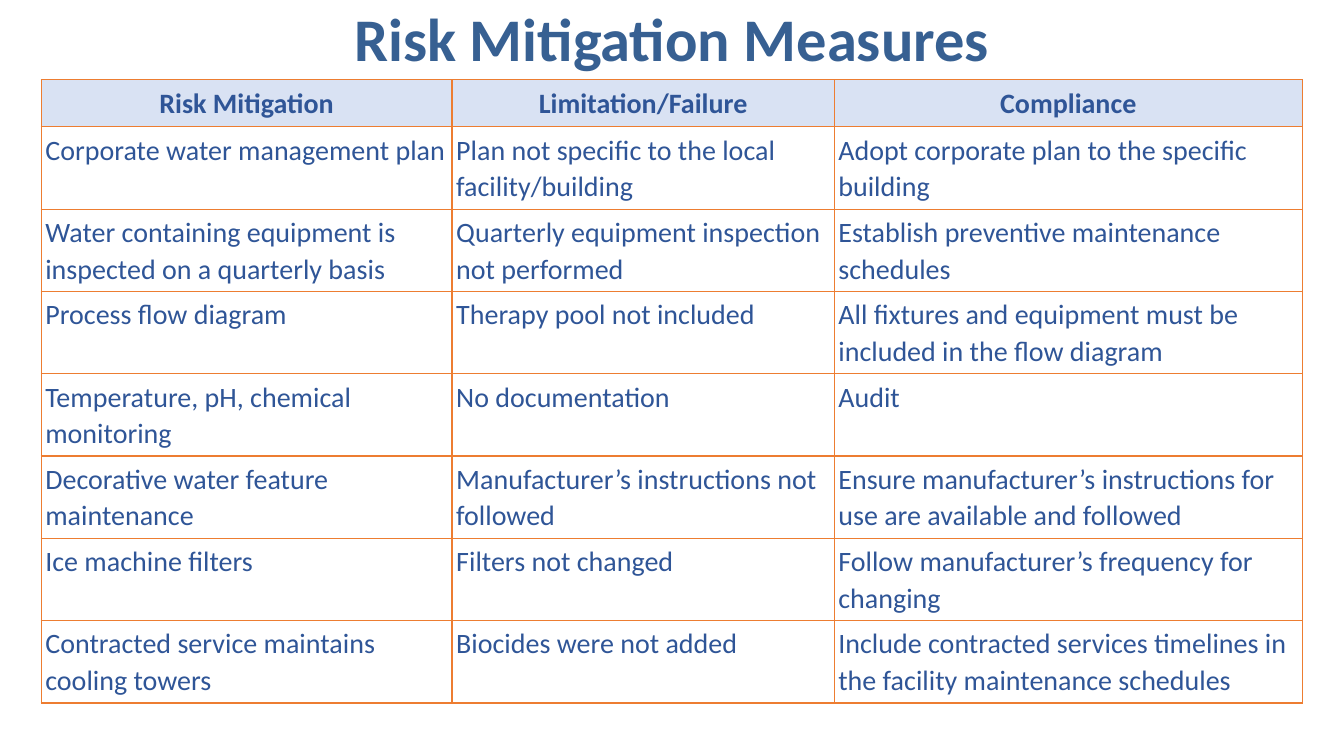
from dataclasses import dataclass

from lxml import etree
from pptx import Presentation
from pptx.dml.color import RGBColor
from pptx.enum.text import MSO_ANCHOR, MSO_AUTO_SIZE, PP_ALIGN
from pptx.oxml.ns import qn
from pptx.util import Pt

CENTER, LEFT = PP_ALIGN.CENTER, PP_ALIGN.LEFT
BOTTOM = MSO_ANCHOR.BOTTOM
NO_AUTOFIT = MSO_AUTO_SIZE.NONE

TITLE = "Risk Mitigation Measures"
HEADINGS = ("Risk Mitigation", "Limitation/Failure", "Compliance")
MEASURES = [
    ("Corporate water management plan",
     "Plan not specific to the local facility/building",
     "Adopt corporate plan to the specific building"),
    ("Water containing equipment is inspected on a quarterly basis",
     "Quarterly equipment inspection not performed",
     "Establish preventive maintenance schedules"),
    ("Process flow diagram",
     "Therapy pool not included",
     "All fixtures and equipment must be included in the flow diagram"),
    ("Temperature, pH, chemical monitoring",
     "No documentation",
     "Audit"),
    ("Decorative water feature maintenance",
     "Manufacturer’s instructions not followed",
     "Ensure manufacturer’s instructions for use are available and followed"),
    ("Ice machine filters",
     "Filters not changed",
     "Follow manufacturer’s frequency for changing"),
    ("Contracted service maintains cooling towers",
     "Biocides were not added",
     "Include contracted services timelines in the facility maintenance schedules"),
]


@dataclass(frozen=True)
class Theme:
    font: str = "Calibri"
    title_size: float = 43.2
    table_size: float = 20
    title_color: str = "376092"
    text_color: str = "2F5597"
    heading_fill: str = "D9E2F3"
    border_color: str = "ED7D31"
    border_width: float = 1


THEME = Theme()
SLIDE_SIZE = (960, 540)
TITLE_BOX = (66, 0, 828, 57)
TABLE_LEFT, TABLE_TOP = 29.4, 57
COLUMN_WIDTHS = (293.5, 273, 334.5)
HEADING_HEIGHT, MEASURE_HEIGHT = 33.6, 58.8
CELL_MARGIN = 3


def style_font(font, size, color, bold):
    font.name = THEME.font
    font.size = Pt(size)
    font.bold = bold
    font.color.rgb = RGBColor.from_string(color)


def add_borders(cell):
    """Outline all four sides; borders must come before the fill in the cell properties."""
    properties = cell._tc.get_or_add_tcPr()
    for index, side in enumerate(("a:lnL", "a:lnR", "a:lnT", "a:lnB")):
        line = etree.Element(qn(side), w=str(Pt(THEME.border_width)))
        fill = etree.SubElement(line, qn("a:solidFill"))
        etree.SubElement(fill, qn("a:srgbClr"), val=THEME.border_color)
        properties.insert(index, line)


def fill_cell(cell, wording, heading):
    cell.margin_left = cell.margin_right = Pt(CELL_MARGIN)
    cell.margin_top = cell.margin_bottom = Pt(CELL_MARGIN)
    if heading:
        cell.fill.solid()
        cell.fill.fore_color.rgb = RGBColor.from_string(THEME.heading_fill)
    else:
        cell.fill.background()
    add_borders(cell)
    cell.text_frame.text = wording
    paragraph = cell.text_frame.paragraphs[0]
    paragraph.alignment = CENTER if heading else LEFT
    paragraph.line_spacing = 1.07
    paragraph.space_after = Pt(8)
    style_font(paragraph.runs[0].font, THEME.table_size, THEME.text_color, heading)


def add_title(slide):
    title = slide.shapes.title
    title.left, title.top, title.width, title.height = map(Pt, TITLE_BOX)
    frame = title.text_frame
    frame.text = TITLE
    frame.auto_size = NO_AUTOFIT
    frame.vertical_anchor = BOTTOM
    paragraph = frame.paragraphs[0]
    paragraph.alignment = CENTER
    paragraph.line_spacing = 0.9
    style_font(paragraph.runs[0].font, THEME.title_size, THEME.title_color, True)


def add_measures_table(slide):
    rows = [HEADINGS, *MEASURES]
    heights = [HEADING_HEIGHT] + [MEASURE_HEIGHT] * len(MEASURES)
    table = slide.shapes.add_table(
        len(rows), len(HEADINGS), Pt(TABLE_LEFT), Pt(TABLE_TOP),
        Pt(sum(COLUMN_WIDTHS)), Pt(sum(heights))).table
    table.horz_banding = False
    for column, width in zip(table.columns, COLUMN_WIDTHS):
        column.width = Pt(width)
    for row_index, (row, height) in enumerate(zip(rows, heights)):
        table.rows[row_index].height = Pt(height)
        for column_index, wording in enumerate(row):
            fill_cell(table.cell(row_index, column_index), wording, row_index == 0)


def main():
    deck = Presentation()
    deck.slide_width, deck.slide_height = map(Pt, SLIDE_SIZE)
    slide = deck.slides.add_slide(deck.slide_layouts.get_by_name("Title Only"))
    add_title(slide)
    add_measures_table(slide)
    deck.save("out.pptx")


if __name__ == "__main__":
    main()
